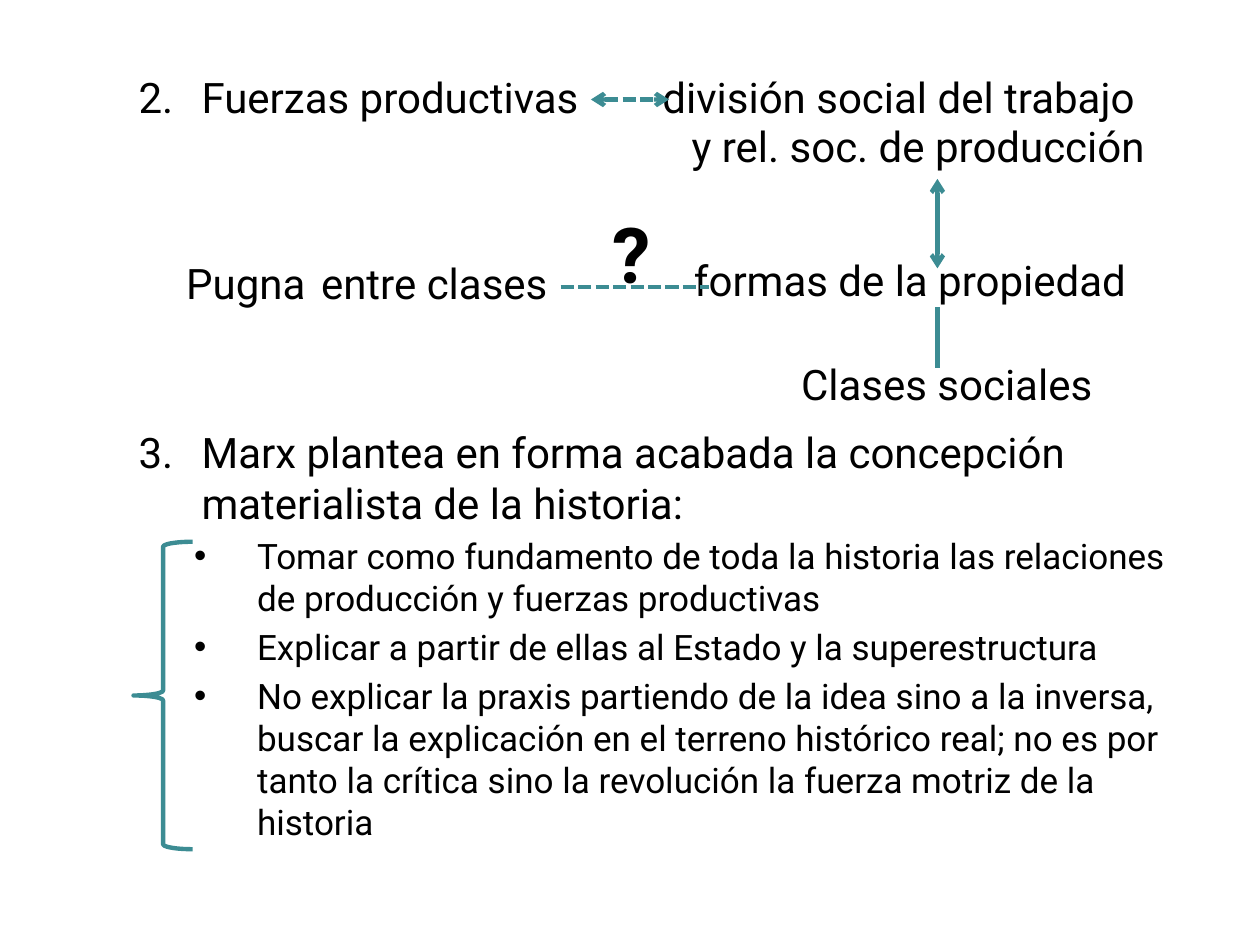
from lxml.etree import SubElement
from pptx import Presentation
from pptx.dml.color import RGBColor
from pptx.enum.dml import MSO_LINE_DASH_STYLE as Dash
from pptx.enum.shapes import MSO_CONNECTOR, MSO_SHAPE
from pptx.enum.text import MSO_ANCHOR, MSO_AUTO_SIZE
from pptx.oxml.ns import qn
from pptx.util import Inches, Pt

FONT = "Roboto"
BLACK, TEAL = "000000", "3C8C93"
WIDTH, HEIGHT = 10, 7.5
TOP_ROW, BODY_TOP = 0.79, 0.52
AXIS = 7.44  # vertical line that joins production, property and classes


def color(value):
    return RGBColor.from_string(value)


def style(font, size, name=FONT, bold=False):
    font.name, font.size, font.bold = name, Pt(size), bold
    font.color.rgb = color(BLACK)


def add_label(page, box, text, size=24, bold=False):
    label = page.shapes.add_textbox(*map(Inches, box))
    frame = label.text_frame
    frame.word_wrap = True
    para = frame.paragraphs[0]
    para.text = text
    for span in para.runs:
        style(span.font, size, bold=bold)
    return para


def style_line(line, dashed=False):
    line.color.rgb = color(TEAL)
    line.width = Pt(2.5)
    if dashed:
        line.dash_style = Dash.SQUARE_DOT


def add_link(page, start, end, dashed=False, arrows=False):
    link = page.shapes.add_connector(
        MSO_CONNECTOR.STRAIGHT, *map(Inches, (*start, *end)))
    style_line(link.line, dashed)
    if arrows:
        outline = link.line._get_or_add_ln()
        for tag in ("a:headEnd", "a:tailEnd"):
            SubElement(outline, qn(tag), type="arrow")
    SubElement(link._element.spPr, qn("a:effectLst"))


def add_list_item(para, text, number=None, gap=None):
    """Format a numbered heading, or a bulleted point when number is None."""
    para.text = text
    para.level = 1 if number else 2
    size, margin = (24, 1) if number else (20, 1.44)
    props = para._p.get_or_add_pPr()
    props.set("marL", str(Inches(margin)))
    props.set("indent", str(Inches(-0.5)))
    para.space_before = Pt(size * 0.2 if gap is None else gap)
    if number:
        SubElement(props, qn("a:buFont"), typeface="+mj-lt")
        SubElement(props, qn("a:buAutoNum"), type="arabicPeriod", startAt=str(number))
    else:
        SubElement(props, qn("a:buFont"), typeface="Arial")
        SubElement(props, qn("a:buChar"), char="•")
    for span in para.runs:
        style(span.font, size)


def fill_body(body, box):
    body.left, body.top, body.width, body.height = map(Inches, box)
    frame = body.text_frame
    frame.auto_size = MSO_AUTO_SIZE.NONE
    frame.vertical_anchor = MSO_ANCHOR.TOP
    items = [
        ("Fuerzas productivas", 2, 0),
        ("Marx plantea en forma acabada la concepción materialista de la historia:", 3, 174),
        ("Tomar como fundamento de toda la historia las relaciones de producción "
         "y fuerzas productivas", None, None),
        ("Explicar a partir de ellas al Estado y la superestructura", None, None),
        ("No explicar la praxis partiendo de la idea sino a la inversa, buscar la "
         "explicación en el terreno histórico real; no es por tanto la crítica sino "
         "la revolución la fuerza motriz de la historia", None, None),
    ]
    for index, (text, number, gap) in enumerate(items):
        para = frame.add_paragraph() if index else frame.paragraphs[0]
        add_list_item(para, text, number, gap)


def add_diagram(page):
    add_label(page, (5.16, BODY_TOP, 4.2, 0.5), "división social del trabajo")
    add_label(page, (5.39, 0.91, 4.02, 0.5), "y rel. soc. de producción")
    clash = add_label(page, (1.38, 1.88, 3.3, 0.64), "Pugna")
    for text, size, name in ((" ", 32, "Arial"), ("entre clases", 24, FONT)):
        span = clash.add_run()
        span.text = text
        style(span.font, size, name)
    add_label(page, (5.41, 1.97, 3.9, 0.5), "formas de la propiedad")
    add_label(page, (6.26, 2.8, 2.6, 0.5), "Clases sociales")
    add_link(page, (4.69, TOP_ROW), (5.31, TOP_ROW), dashed=True, arrows=True)
    add_link(page, (4.45, 2.28), (5.63, 2.28), dashed=True)
    add_label(page, (4.76, 1.59, 0.47, 0.84), "?", size=44, bold=True)
    add_link(page, (AXIS, 1.42), (AXIS, 2.13), arrows=True)
    add_link(page, (AXIS, 2.44), (AXIS, 2.92))


def add_brace(page, box):
    brace = page.shapes.add_shape(MSO_SHAPE.LEFT_BRACE, *map(Inches, box))
    brace.shadow.inherit = False
    brace.fill.background()
    style_line(brace.line)


def main():
    deck = Presentation()
    deck.slide_width, deck.slide_height = Inches(WIDTH), Inches(HEIGHT)
    page = deck.slides.add_slide(deck.slide_layouts[1])
    title = page.shapes.title._element
    title.getparent().remove(title)
    fill_body(page.placeholders[1], (0.5, BODY_TOP, WIDTH - 1, 6.61))
    add_diagram(page)
    add_brace(page, (1.06, 4.3, 0.47, 2.44))
    deck.save("out.pptx")


if __name__ == "__main__":
    main()
